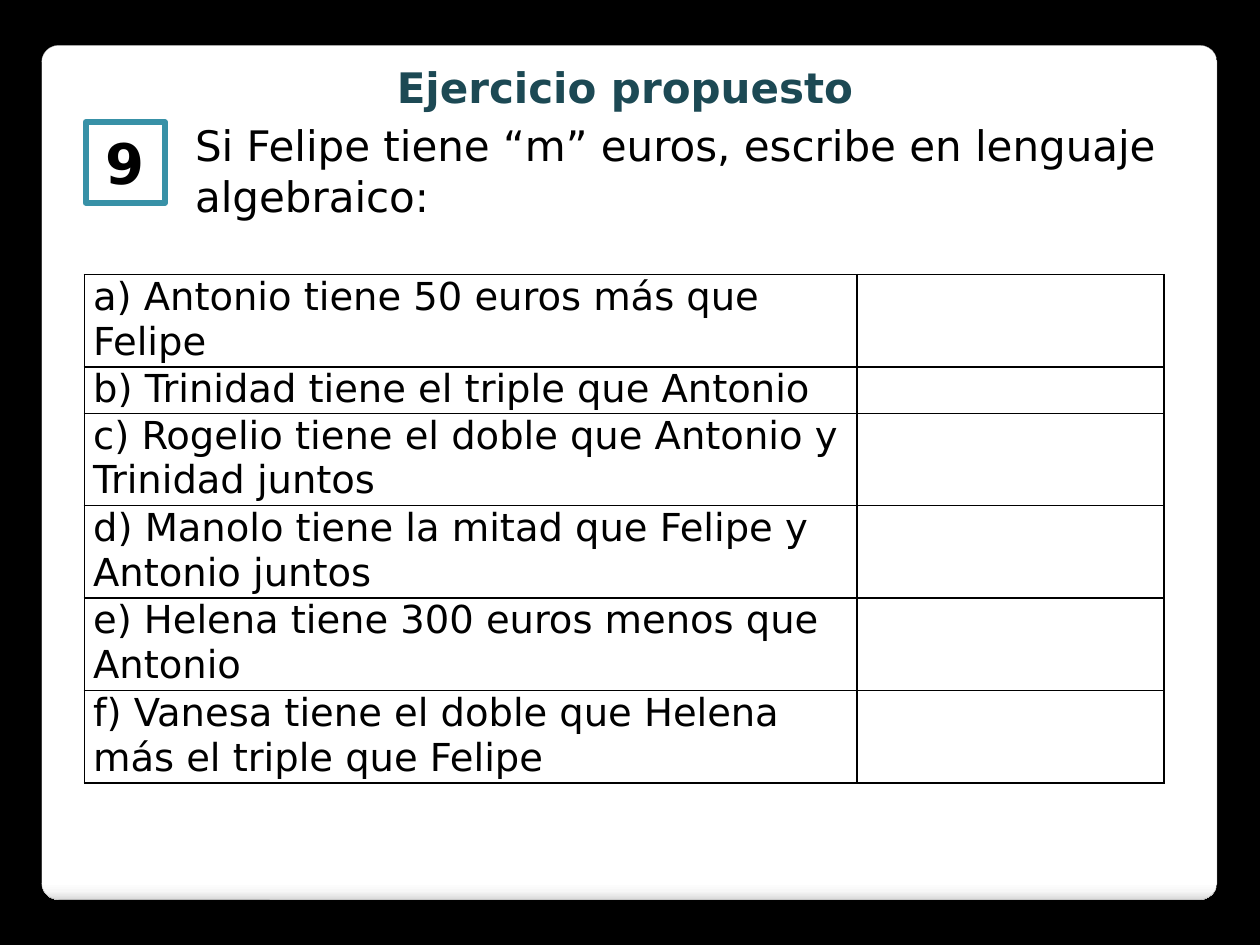
from lxml import etree
from pptx import Presentation
from pptx.dml.color import RGBColor
from pptx.enum.shapes import MSO_SHAPE
from pptx.enum.text import MSO_ANCHOR, PP_ALIGN
from pptx.oxml.ns import qn
from pptx.util import Inches, Pt

ROUNDED = MSO_SHAPE.ROUNDED_RECTANGLE
RECTANGLE = MSO_SHAPE.RECTANGLE
LEFT, CENTER = PP_ALIGN.LEFT, PP_ALIGN.CENTER
TOP, MIDDLE = MSO_ANCHOR.TOP, MSO_ANCHOR.MIDDLE

FONT = "DejaVu Sans"
COLORS = {
    "page": "000000",
    "panel": "FFFFFF",
    "panel_low": "F7F7F7",
    "panel_edge": "DADADA",
    "panel_line": "A4A4A4",
    "title": "1C4954",
    "badge_line": "3891A7",
    "text": "000000",
    "border": "000000",
}

WIDTH, HEIGHT = Inches(10), Inches(7.5)
COLUMN, ROW = WIDTH // 1000, HEIGHT // 750  # fine square grid

# Each statement with the number of lines it takes in the table
STATEMENTS = [
    ("a) Antonio tiene 50 euros más que Felipe", 2),
    ("b) Trinidad tiene el triple que Antonio", 1),
    ("c) Rogelio tiene el doble que Antonio y Trinidad juntos", 2),
    ("d) Manolo tiene la mitad que Felipe y Antonio juntos", 2),
    ("e) Helena tiene 300 euros menos que Antonio", 2),
    ("f) Vanesa tiene el doble que Helena más el triple que Felipe", 2),
]
TABLE_COLUMNS = (613, 244)
LINE_ROWS = 36.6


def color(name):
    return RGBColor.from_string(COLORS[name])


def place(left, top, width, height):
    """Turn grid columns and rows into slide lengths."""
    return left * COLUMN, top * ROW, width * COLUMN, height * ROW


def write(frame, text, size, ink="text", bold=False, align=LEFT):
    frame.word_wrap = True
    para = frame.paragraphs[0]
    para.alignment = align
    span = para.add_run()
    span.text = text
    span.font.name = FONT
    span.font.size = Pt(size)
    span.font.bold = bold
    span.font.color.rgb = color(ink)
    return para


def add_text(page, area, text, size, **style):
    box = page.shapes.add_textbox(*place(*area))
    write(box.text_frame, text, size, **style)


def add_outlined(page, kind, area, line, line_width):
    shape = page.shapes.add_shape(kind, *place(*area))
    shape.shadow.inherit = False
    shape.fill.solid()
    shape.fill.fore_color.rgb = color("panel")
    shape.line.color.rgb = color(line)
    shape.line.width = Pt(line_width)
    return shape


def shade_lower_edge(shape):
    """Give the shape a downward gradient that darkens only at its bottom."""
    shape.fill.gradient()
    shape.fill.gradient_angle = 270
    stops = shape.element.spPr.find(qn("a:gradFill")).find(qn("a:gsLst"))
    for stop in list(stops):
        stops.remove(stop)
    for percent, name in ((0, "panel"), (98, "panel"), (99, "panel_low"), (100, "panel_edge")):
        stop = etree.SubElement(stops, qn("a:gs"), pos=str(percent * 1000))
        etree.SubElement(stop, qn("a:srgbClr"), val=COLORS[name])


def add_panel(page):
    panel = add_outlined(page, ROUNDED, (33, 36, 933, 678), "panel_line", 0.16)
    panel.adjustments[0] = 0.02
    shade_lower_edge(panel)


def add_badge(page, text):
    badge = add_outlined(page, RECTANGLE, (68, 97, 63, 64), "badge_line", 3.35)
    line = badge.line._get_or_add_ln()
    etree.SubElement(line, qn("a:round"))
    badge.text_frame.vertical_anchor = MIDDLE
    write(badge.text_frame, text, 32, bold=True, align=CENTER)


def border_cell(cell):
    props = cell._tc.get_or_add_tcPr()
    for index, side in enumerate(("a:lnL", "a:lnR", "a:lnT", "a:lnB")):
        line = etree.Element(qn(side), w=str(Pt(1)))
        fill = etree.SubElement(line, qn("a:solidFill"))
        etree.SubElement(fill, qn("a:srgbClr"), val=COLORS["border"])
        props.insert(index, line)


def format_cell(cell):
    cell.margin_left = cell.margin_right = 7 * COLUMN
    cell.margin_top = cell.margin_bottom = 0
    cell.vertical_anchor = TOP
    cell.fill.background()
    border_cell(cell)


def add_statements(page):
    heights = [int(lines * LINE_ROWS * ROW) for _, lines in STATEMENTS]
    left, top, width, _ = place(67, 218, sum(TABLE_COLUMNS), 0)
    frame = page.shapes.add_table(
        len(STATEMENTS), len(TABLE_COLUMNS), left, top, width, sum(heights)
    )
    table = frame.table
    table.first_row = table.horz_banding = False
    for column, columns in zip(table.columns, TABLE_COLUMNS):
        column.width = columns * COLUMN
    for row, height, (text, _) in zip(table.rows, heights, STATEMENTS):
        row.height = height
        for cell in row.cells:
            format_cell(cell)
        para = write(row.cells[0].text_frame, text, 22)
        para.space_before = para.space_after = Pt(3)


def main():
    deck = Presentation()
    deck.slide_width, deck.slide_height = WIDTH, HEIGHT
    page = deck.slides.add_slide(deck.slide_layouts[6])
    page.background.fill.solid()
    page.background.fill.fore_color.rgb = color("page")

    add_panel(page)
    add_text(page, (35, 44, 922, 50), "Ejercicio propuesto", 24,
             ink="title", bold=True, align=CENTER)
    add_badge(page, "9")
    add_text(page, (145, 90, 787, 91),
             "Si Felipe tiene “m” euros, escribe en lenguaje algebraico:", 24)
    add_statements(page)
    deck.save("out.pptx")


if __name__ == "__main__":
    main()
